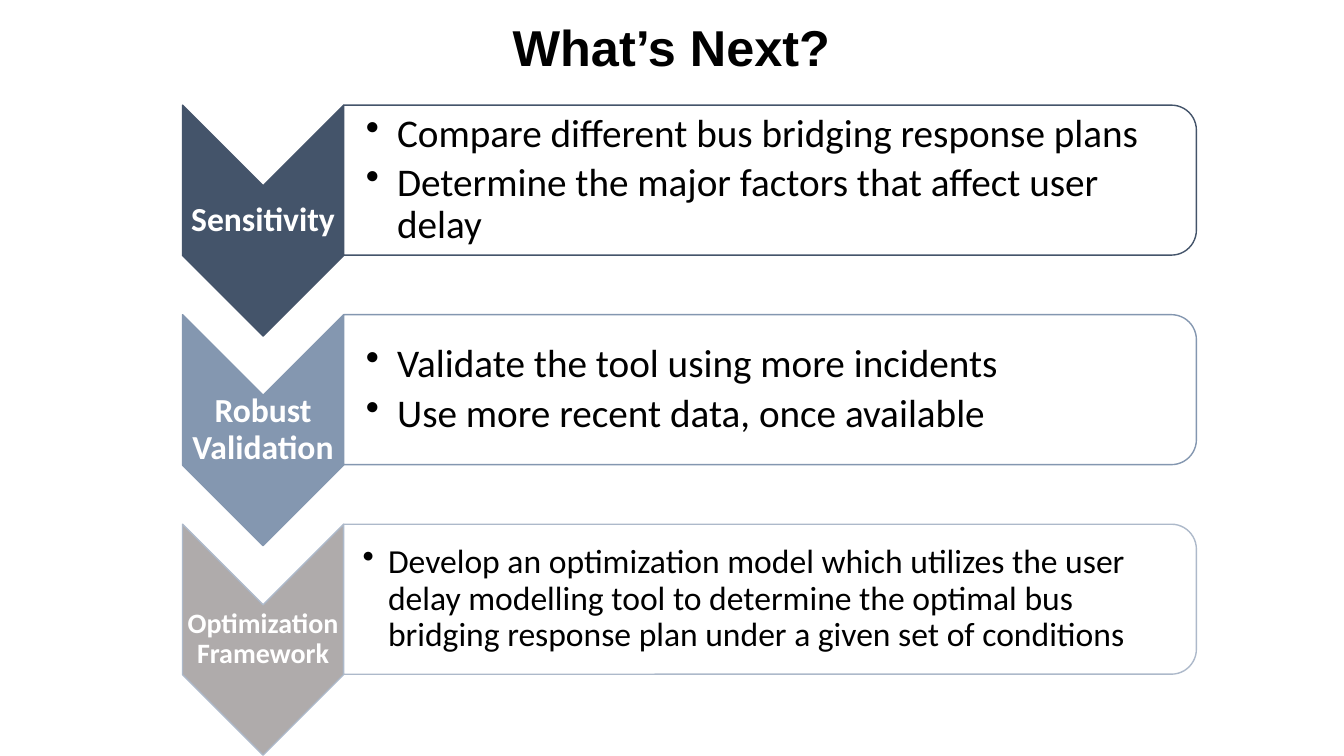
from lxml.etree import SubElement
from pptx import Presentation
from pptx.dml.color import RGBColor
from pptx.enum.shapes import MSO_SHAPE
from pptx.enum.text import MSO_ANCHOR, PP_ALIGN
from pptx.oxml.ns import qn
from pptx.util import Cm, Pt

STEPS = [
    ("Sensitivity", 24, "44546A", "44546A", 28, 0.79, 0.56,
     ["Compare different bus bridging response plans",
      "Determine the major factors that affect user delay"]),
    ("Robust Validation", 24, "8497B0", "8497B0", 28, 0.79, 0.56,
     ["Validate the tool using more incidents",
      "Use more recent data, once available"]),
    ("Optimization Framework", 20, "AFABAB", "ADB9CA", 24, 0.64, 0.48,
     ["Develop an optimization model which utilizes the user delay modelling "
      "tool to determine the optimal bus bridging response plan under a given "
      "set of conditions"]),
]
CHEVRON_WIDTH, CHEVRON_HEIGHT = 4.06, 5.82
PANEL_WIDTH, PANEL_HEIGHT = 21.49, 3.78
STEP_LEFT, STEP_TOP, STEP_PITCH = 4.6, 2.65, 5.28


def color(hex_string):
    return RGBColor.from_string(hex_string)


def add_turned_shape(slide, kind, left, top, width, height, fill, line):
    shape = slide.shapes.add_shape(
        kind, Cm(left + (width - height) / 2), Cm(top + (height - width) / 2),
        Cm(height), Cm(width))
    shape.rotation = 90
    shape.shadow.inherit = False
    shape.fill.solid()
    shape.fill.fore_color.rgb = color(fill)
    shape.line.color.rgb = color(line)
    shape.line.width = Pt(1)
    return shape


def add_text(slide, left, top, width, height, lines, size, font_name, hex_string,
             bold=False, alignment=PP_ALIGN.CENTER, margin=0.04):
    box = slide.shapes.add_textbox(Cm(left), Cm(top), Cm(width), Cm(height))
    text_frame = box.text_frame
    text_frame.word_wrap = True
    text_frame.vertical_anchor = MSO_ANCHOR.MIDDLE
    text_frame.margin_left = Cm(margin)
    text_frame.margin_right = text_frame.margin_top = text_frame.margin_bottom = Cm(0.04)
    text_frame.text = "\n".join(lines)
    for paragraph in text_frame.paragraphs:
        paragraph.alignment = alignment
        paragraph.line_spacing = 0.9
        for run in paragraph.runs:
            run.font.name = font_name
            run.font.size = Pt(size)
            run.font.bold = bold
            run.font.color.rgb = color(hex_string)
    return text_frame


def add_bullet(paragraph, indent):
    paragraph.space_after = Pt(5)
    properties = paragraph._p.get_or_add_pPr()
    properties.set("marL", str(Cm(indent)))
    properties.set("indent", str(-Cm(indent)))
    SubElement(properties, qn("a:buChar")).set("char", "•")


def add_title(slide, left, top, width, height):
    add_text(slide, left, top, width, height, ["What’s Next?"], 36, "Arial", "000000", bold=True)


def add_step(slide, left, top, step):
    label, label_size, fill, line, size, indent, margin, bullets = step
    add_turned_shape(slide, MSO_SHAPE.CHEVRON, left, top,
                     CHEVRON_WIDTH, CHEVRON_HEIGHT, fill, line)
    add_text(slide, left, top + CHEVRON_WIDTH / 2, CHEVRON_WIDTH,
             CHEVRON_HEIGHT - CHEVRON_WIDTH, [label], label_size, "Calibri", "FFFFFF", bold=True)
    panel_left = left + CHEVRON_WIDTH
    add_turned_shape(slide, MSO_SHAPE.ROUND_2_SAME_RECTANGLE, panel_left, top,
                     PANEL_WIDTH, PANEL_HEIGHT, "FFFFFF", line)
    text_frame = add_text(slide, panel_left, top + 0.18, PANEL_WIDTH - 0.18,
                          PANEL_HEIGHT - 0.36, bullets, size, "Calibri", "000000",
                          alignment=PP_ALIGN.LEFT, margin=margin)
    for paragraph in text_frame.paragraphs:
        add_bullet(paragraph, indent)


def main():
    presentation = Presentation()
    presentation.slide_width = Cm(33.87)
    presentation.slide_height = Cm(19.05)
    slide = presentation.slides.add_slide(presentation.slide_layouts[6])
    add_title(slide, 5.97, 0.3, 21.9, 1.93)
    for index, step in enumerate(STEPS):
        add_step(slide, STEP_LEFT, STEP_TOP + index * STEP_PITCH, step)
    presentation.save("out.pptx")


if __name__ == "__main__":
    main()
